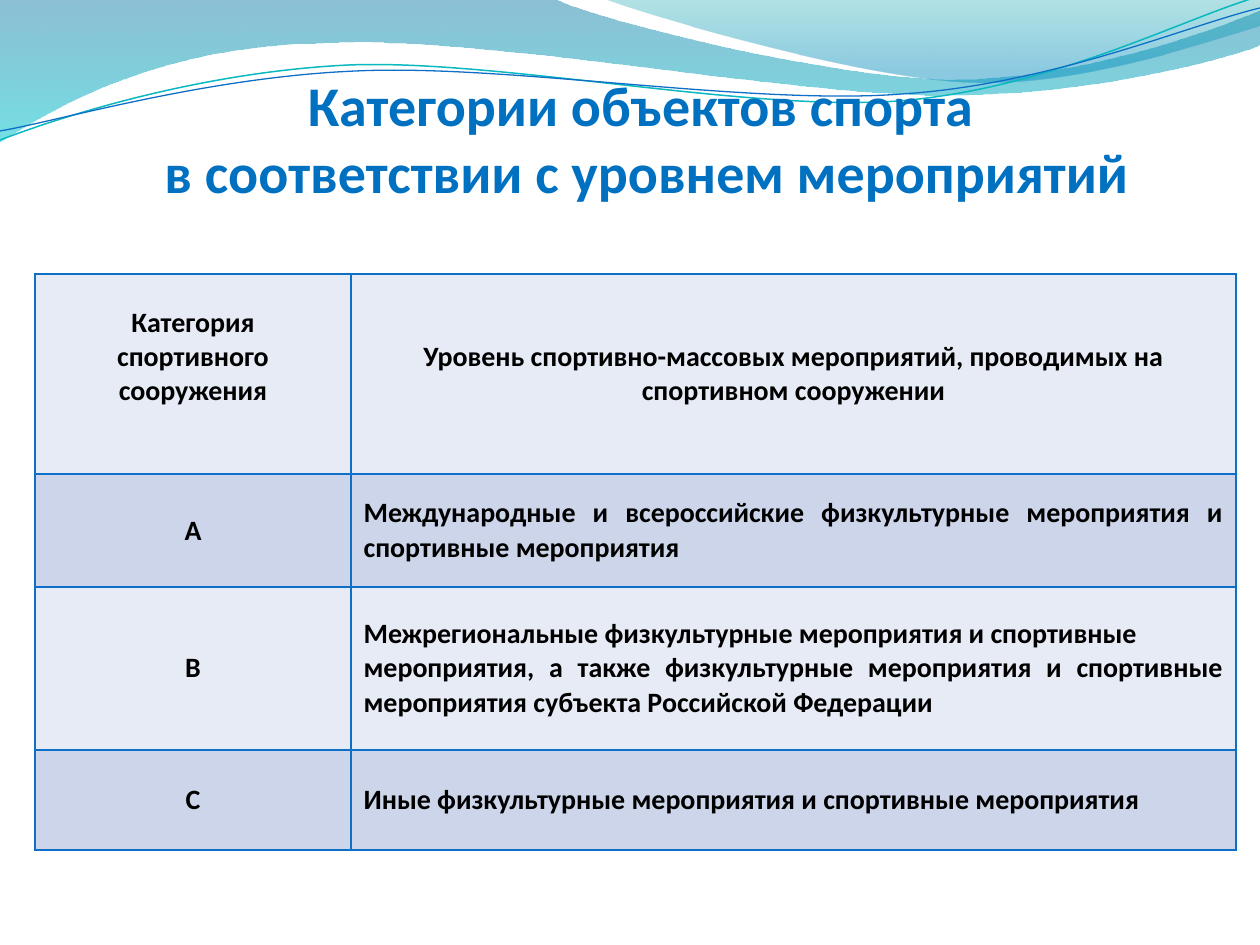
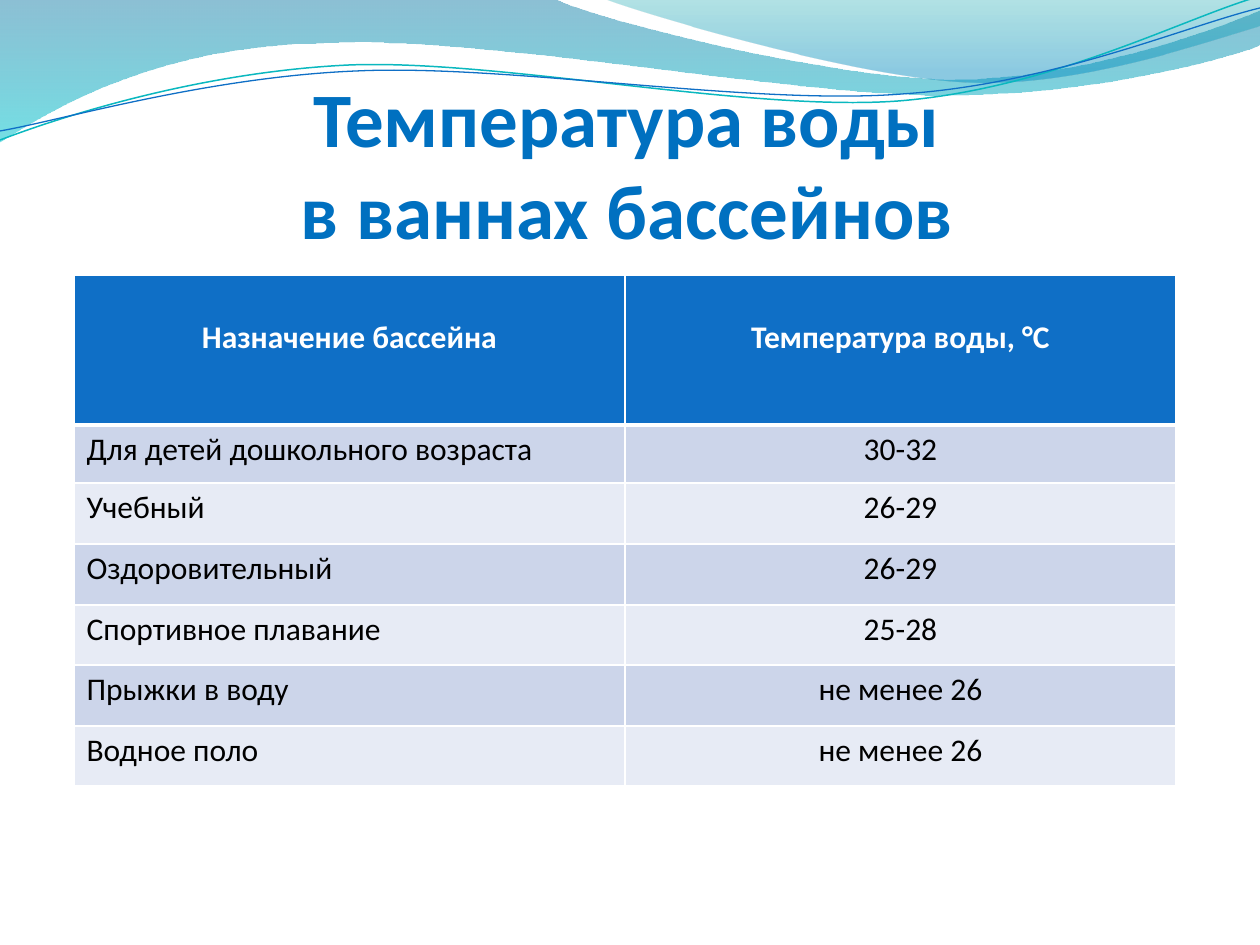
from lxml import etree
from pptx import Presentation
from pptx.dml.color import RGBColor
from pptx.enum.text import MSO_ANCHOR, PP_ALIGN
from pptx.oxml.ns import qn
from pptx.util import Emu, Pt

CENTER, JUSTIFY, LEFT = PP_ALIGN.CENTER, PP_ALIGN.JUSTIFY, PP_ALIGN.LEFT
TOP, MIDDLE, BOTTOM = MSO_ANCHOR.TOP, MSO_ANCHOR.MIDDLE, MSO_ANCHOR.BOTTOM

SCALE = 914400 / 126  # EMU per pixel
FONT = "Calibri"
COLORS = {
    "title": "0070C0", "accent": "0F6FC6", "teal": "0AB8BF",
    "light": "E7EBF5", "dark": "CCD5EA", "white": "FFFFFF", "black": "000000",
    "band_top": "0074A1", "band_bottom": "00C6CF",
    "corner_top": "00A1A9", "corner_bottom": "008BBF",
}

# Waves at the top of every slide: a step of one point is a straight line,
# a step of three points is a Bezier curve. Stops are (position, colour, opacity %).
WAVES = [
    {"start": (0, 0),
     "steps": [((554, -1),),
               ((600, 21), (837, 79), (955, 79)),
               ((1075, 79), (1207, 33), (1260, 11)),
               ((1261, 45),),
               ((1239, 55), (1096, 96), (940, 95)),
               ((784, 95), (481, 35), (324, 43)),
               ((163, 45), (58, 105), (-1, 142)),
               ((0, 0),)],
     "stops": [(0, "band_top", 45), (1, "band_bottom", 55)]},
    {"start": (604, -1),
     "steps": [((641, 14), (859, 78), (969, 82)),
               ((1079, 87), (1211, 40), (1260, 26)),
               ((1260, 0),),
               ((604, -1),)],
     "stops": [(0, "corner_top", 30), (0.8, "corner_bottom", 45)]},
    {"start": (0, 140),
     "steps": [((60, 117), (199, 72), (349, 65)),
               ((498, 59), (747, 112), (898, 101)),
               ((1050, 89), (1182, 19), (1257, -3))],
     "line": ("teal", 0.85)},
    {"start": (0, 131),
     "steps": [((59, 121), (207, 77), (357, 71)),
               ((508, 64), (752, 106), (903, 94)),
               ((1053, 84), (1186, 26), (1260, 8))],
     "line": ("accent", 0.75)},
]

SLIDES = [
    {"title": "Категории объектов спорта \vв соответствии с уровнем мероприятий",
     "title_box": (75, 136, 1144, 69), "title_size": 32,
     "table_at": (35, 274), "columns": [316, 885], "rows": [200, 113, 163, 100],
     "cells": [
         ("Категория\nспортивного\nсооружения",
          "Уровень спортивно-массовых мероприятий, проводимых на\n"
          "спортивном сооружении"),
         ("А", "Международные и всероссийские физкультурные мероприятия "
               "и спортивные мероприятия"),
         ("В", "Межрегиональные физкультурные мероприятия и спортивные\n"
               "мероприятия, а также физкультурные мероприятия и спортивные "
               "мероприятия субъекта Российской Федерации"),
         ("С", "Иные физкультурные мероприятия и спортивные мероприятия"),
     ],
     "size": 16, "bold_body": True, "anchor": MIDDLE, "body_align": [CENTER, JUSTIFY],
     "header": ("light", "black"), "border": "accent", "header_rule": 1,
     "margins": {(0, 0): (6, 40)}},
    {"title": "Температура воды \vв ваннах бассейнов ",
     "title_box": (64, 98, 1144, 157), "title_size": 44,
     "table_at": (74, 275), "columns": [551, 551],
     "rows": [150, 58, 61, 61, 60, 61, 60],
     "cells": [
         ("Назначение бассейна", "Температура воды, °С"),
         ("Для детей дошкольного возраста", "30-32"),
         ("Учебный", "26-29"),
         ("Оздоровительный", "26-29"),
         ("Спортивное плавание", "25-28"),
         ("Прыжки в воду", "не менее 26"),
         ("Водное поло", "не менее 26"),
     ],
     "size": 18, "bold_body": False, "anchor": TOP, "body_align": [LEFT, CENTER],
     "header": ("accent", "white"), "border": "white", "header_rule": 3,
     "margins": {(0, 0): (44, 6), (0, 1): (44, 6)}},
]


def px(value):
    return Emu(round(value * SCALE))


def rgb(name):
    return RGBColor.from_string(COLORS[name])


def format_text(text_frame, size, color, bold, align):
    for paragraph in text_frame.paragraphs:
        paragraph.alignment = align
        for run in paragraph.runs:
            run.font.name = FONT
            run.font.size = Pt(size)
            run.font.bold = bold
            run.font.color.rgb = rgb(color)


def bend(shape, steps):
    """Join the line segments of each three-point step into one Bezier curve."""
    outline = next(shape._element.iter(qn("a:path")))
    segments = iter(outline.findall(qn("a:lnTo")))
    for step in steps:
        parts = [next(segments) for _ in step]
        if len(parts) == 3:
            curve = etree.Element(qn("a:cubicBezTo"))
            parts[0].addprevious(curve)
            for part in parts:
                curve.append(part[0])
                outline.remove(part)


def add_wave(slide, wave):
    start_x, start_y = map(px, wave["start"])
    builder = slide.shapes.build_freeform(start_x, start_y, scale=1.0)
    points = [(px(x), px(y)) for step in wave["steps"] for x, y in step]
    builder.add_line_segments(points, close="stops" in wave)
    shape = builder.convert_to_shape()
    bend(shape, wave["steps"])
    shape.shadow.inherit = False
    if "line" in wave:
        color, width = wave["line"]
        shape.fill.background()
        shape.line.color.rgb = rgb(color)
        shape.line.width = Pt(width)
        return
    shape.line.fill.background()
    shape.fill.gradient()
    shape.fill.gradient_angle = 270
    for stop, (position, color, _) in zip(shape.fill.gradient_stops, wave["stops"]):
        stop.position = position
        stop.color.rgb = rgb(color)
    gradient = shape._element.spPr.find(qn("a:gradFill"))
    for element, (_, _, opacity) in zip(gradient.iter(qn("a:srgbClr")), wave["stops"]):
        etree.SubElement(element, qn("a:alpha"), val=str(opacity * 1000))


def add_title(slide, page):
    box = slide.shapes.add_textbox(*map(px, page["title_box"]))
    frame = box.text_frame
    frame.word_wrap = True
    frame.vertical_anchor = BOTTOM
    frame.margin_left = frame.margin_right = frame.margin_bottom = 0
    frame.margin_top = px(6)
    frame.text = page["title"]
    format_text(frame, page["title_size"], "title", True, CENTER)


def set_borders(cell, color, top, bottom):
    properties = cell._tc.get_or_add_tcPr()
    sides = (("lnL", 1), ("lnR", 1), ("lnT", top), ("lnB", bottom))
    for index, (side, width) in enumerate(sides):
        line = etree.Element(qn("a:" + side), w=str(Pt(width)))
        fill = etree.SubElement(line, qn("a:solidFill"))
        etree.SubElement(fill, qn("a:srgbClr"), val=COLORS[color])
        properties.insert(index, line)


def add_table(slide, page):
    columns, rows = page["columns"], page["rows"]
    box = (*page["table_at"], sum(columns), sum(rows))
    table = slide.shapes.add_table(len(rows), len(columns), *map(px, box)).table
    table.first_row = table.horz_banding = False
    for column, width in zip(table.columns, columns):
        column.width = px(width)
    for row, height in zip(table.rows, rows):
        row.height = px(height)
    for r, texts in enumerate(page["cells"]):
        for c, text in enumerate(texts):
            cell = table.cell(r, c)
            is_header = r == 0
            fill, color = page["header"] if is_header else (
                "dark" if r % 2 else "light", "black")
            cell.text_frame.text = text
            format_text(cell.text_frame, page["size"], color,
                        is_header or page["bold_body"],
                        CENTER if is_header else page["body_align"][c])
            cell.vertical_anchor = page["anchor"]
            top, bottom = page["margins"].get((r, c), (6, 6))
            cell.margin_top, cell.margin_bottom = px(top), px(bottom)
            cell.fill.solid()
            cell.fill.fore_color.rgb = rgb(fill)
            set_borders(cell, page["border"],
                        top=page["header_rule"] if r == 1 else 1,
                        bottom=page["header_rule"] if is_header else 1)


presentation = Presentation()
presentation.slide_width, presentation.slide_height = px(1260), px(945)
blank = presentation.slide_layouts[6]
for page in SLIDES:
    slide = presentation.slides.add_slide(blank)
    for wave in WAVES:
        add_wave(slide, wave)
    add_title(slide, page)
    add_table(slide, page)
presentation.save("out.pptx")
